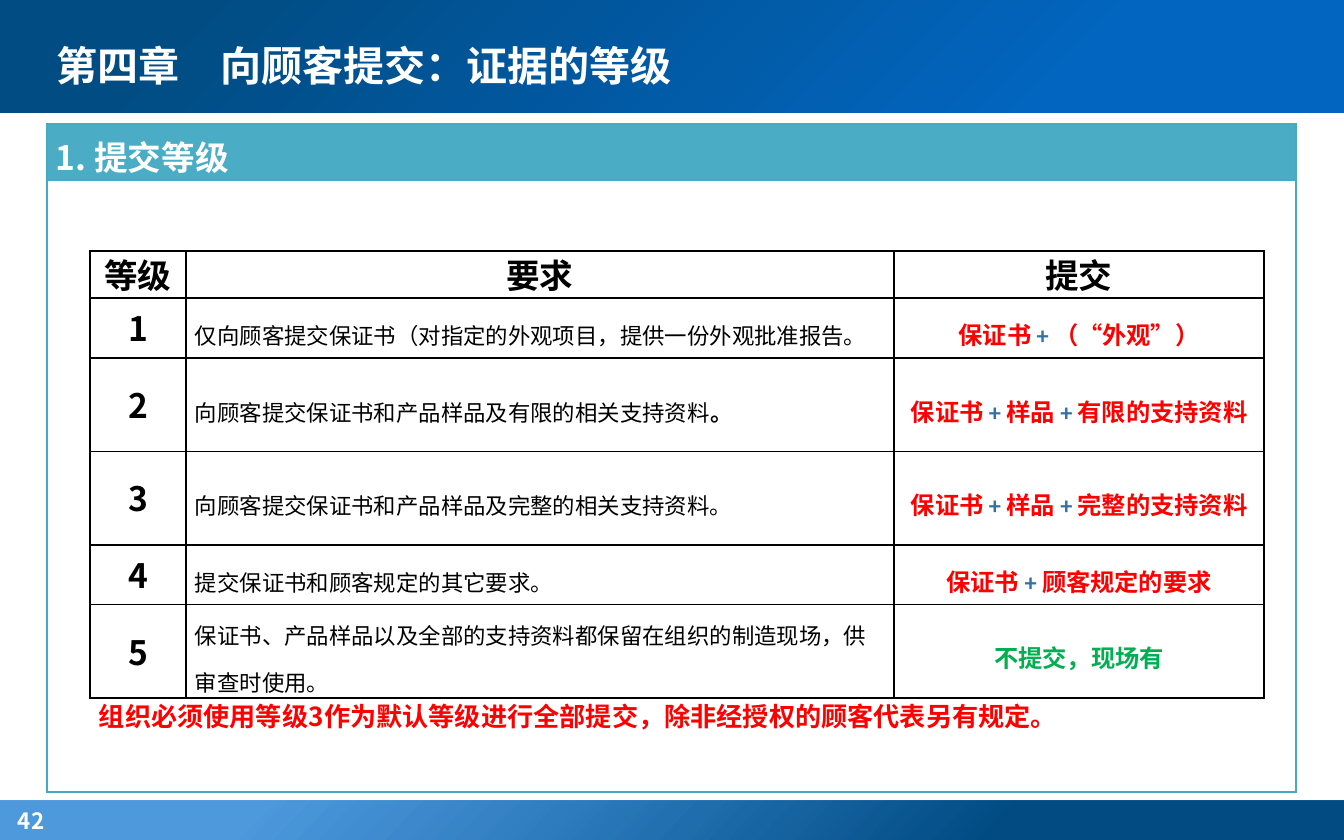
from dataclasses import dataclass
from typing import Optional

from pptx import Presentation
from pptx import util as u
from pptx.dml.color import RGBColor
from pptx.enum import shapes, text
from pptx.oxml.xmlchemy import OxmlElement

SCALE = 914400 / 134.4  # EMU per px

WHITE = RGBColor(0xFF, 0xFF, 0xFF)
BLACK = RGBColor(0, 0, 0)
RED = RGBColor(0xFF, 0, 0)
GREEN = RGBColor(0, 0xB0, 0x50)
PLUS = RGBColor(0x33, 0x71, 0xA4)
TEAL = RGBColor(0x4B, 0xAC, 0xC6)
EDGE = RGBColor(0x46, 0xAA, 0xC5)
NAVY = RGBColor(0x01, 0x4C, 0x83)
BLUE = RGBColor(0x02, 0x65, 0xBF)
SKY = RGBColor(0x02, 0x6D, 0xCE)

NOTO, CALIBRI, TIMES = "Noto Sans CJK SC", "Calibri", "Times New Roman"
LEFT, MID = text.PP_ALIGN.LEFT, text.PP_ALIGN.CENTER
INSET = 9


@dataclass
class Run:
    text: str
    color: Optional[RGBColor] = None
    bold: Optional[bool] = None


@dataclass
class Stop:
    pos: int
    color: RGBColor
    alpha: int = 100


@dataclass
class Level:
    need: list[Run]
    give: list[Run]
    height: int


def px(n: float) -> int:
    return round(n * SCALE)


def node(parent, tag: str, **attrs):
    """Append an XML child with the given attributes."""
    child = OxmlElement(tag)
    for key, val in attrs.items():
        child.set(key, str(val))
    parent.append(child)
    return child


def put(frame, runs: list[Run], *, size: int, font: str = NOTO,
        color: RGBColor = BLACK, bold: bool = True, align=LEFT,
        lead: Optional[int] = None) -> None:
    """Write one formatted paragraph into a text frame."""
    frame.word_wrap = True
    para = frame.paragraphs[0]
    para.alignment = align
    if lead:
        para.line_spacing = u.Pt(lead)
    for item in runs:
        run = para.add_run()
        run.text = item.text
        face = run.font
        face.size, face.name = u.Pt(size), font
        face.bold = bold if item.bold is None else item.bold
        face.color.rgb = item.color or color
        node(face._element, "a:ea", typeface=NOTO)


def band(slide, top: int, height: int, stops: list[Stop]) -> None:
    """Full-width bar, shaded in circles from its lower right corner."""
    bar = slide.shapes.add_shape(
        shapes.MSO_SHAPE.RECTANGLE, 0, px(top), px(1344), px(height))
    bar.shadow.inherit = False
    bar.line.fill.background()
    bar.fill.background()
    grad = OxmlElement("a:gradFill")
    marks = node(grad, "a:gsLst")
    for stop in stops:
        mark = node(marks, "a:gs", pos=stop.pos * 1000)
        tint = node(mark, "a:srgbClr", val=stop.color)
        if stop.alpha < 100:
            node(tint, "a:alpha", val=stop.alpha * 1000)
    way = node(grad, "a:path", path="circle")
    node(way, "a:fillToRect", l=100000, t=100000)
    props = bar._element.spPr
    props.replace(props.find("{*}noFill"), grad)


def grid(slide, left: int, top: int, cols: list[int], rows: list[int]):
    """Plain table with no style banding."""
    table = slide.shapes.add_table(
        len(rows), len(cols), px(left), px(top),
        px(sum(cols)), px(sum(rows))).table
    table.first_row = table.horz_banding = False
    for col, width in zip(table.columns, cols):
        col.width = px(width)
    for row, height in zip(table.rows, rows):
        row.height = px(height)
    return table


def trim(cell, edge: RGBColor, width: float, *,
         fill: Optional[RGBColor] = None, left: int = INSET, top: int = 0,
         anchor=text.MSO_ANCHOR.TOP) -> None:
    """Set a cell's fill, margins and four borders."""
    cell.margin_left, cell.margin_right = px(left), px(INSET)
    cell.margin_top, cell.margin_bottom = px(top), 0
    cell.vertical_anchor = anchor
    if fill is None:
        cell.fill.background()
    else:
        cell.fill.solid()
        cell.fill.fore_color.rgb = fill
    props = cell._tc.get_or_add_tcPr()
    for i, side in enumerate("LRTB"):
        line = OxmlElement(f"a:ln{side}")
        line.set("w", str(u.Pt(width)))
        node(node(line, "a:solidFill"), "a:srgbClr", val=edge)
        props.insert(i, line)


def total(*parts: str) -> list[Run]:
    """Join red parts with blue plus signs."""
    runs = [Run(f"{parts[0]} ")]
    for part in parts[1:]:
        runs += [Run("+ ", PLUS), Run(f"{part} ")]
    runs[-1].text = runs[-1].text.rstrip()
    return runs


LEVELS = [
    Level([Run("仅向顾客提交保证书（对指定的外观项目，提供一份外观批准报告。")],
          total("保证书", "（“外观”）"), 60),
    Level([Run("向顾客提交保证书和产品样品及有限的相关支持资料"),
           Run("。", bold=True)],
          total("保证书", "样品", "有限的支持资料"), 93),
    Level([Run("向顾客提交保证书和产品样品及完整的相关支持资料。")],
          total("保证书", "样品", "完整的支持资料"), 93),
    Level([Run("提交保证书和顾客规定的其它要求。")],
          total("保证书", "顾客规定的要求"), 60),
    Level([Run("保证书、产品样品以及全部的支持资料都保留在组织的制造现场，供审查时使用。")],
          [Run("不提交，现场有", GREEN)], 93),
]


def main() -> None:
    deck = Presentation()
    deck.slide_width, deck.slide_height = px(1344), px(840)
    slide = deck.slides.add_slide(deck.slide_layouts[5])

    # Header and footer bands, page number
    band(slide, 801, 41, [Stop(26, NAVY), Stop(80, SKY, 70)])
    band(slide, -4, 117, [Stop(21, BLUE), Stop(86, NAVY)])
    page = slide.shapes.add_textbox(0, px(802), px(79), px(38)).text_frame
    page.margin_left, page.margin_top, page.margin_bottom = px(18), 0, 0
    page.vertical_anchor = text.MSO_ANCHOR.MIDDLE
    put(page, [Run("42")], size=12, color=WHITE)

    # Title, moved above the bands
    title = slide.shapes.title
    title.left, title.top = px(43), px(18)
    title.width, title.height = px(857), px(95)
    title.text_frame.vertical_anchor = text.MSO_ANCHOR.MIDDLE
    put(title.text_frame, [Run("第四章　向顾客提交：证据的等级")],
        size=22, font=TIMES, color=WHITE)
    slide.shapes._spTree.append(title._element)

    # Section frame with heading and closing rule
    frame = grid(slide, 47, 124, [1249], [56, 612])
    head, body = frame.cell(0, 0), frame.cell(1, 0)
    trim(head, EDGE, 0.75, fill=TEAL)
    put(head.text_frame, [Run("1. 提交等级")], size=18, color=WHITE, lead=30)
    trim(body, EDGE, 0.75, left=52, top=493)
    put(body.text_frame,
        [Run("组织必须使用等级3作为默认等级进行全部提交，除非经授权的顾客代表另有规定。")],
        size=14, color=RED, lead=33)

    # Table of levels
    table = grid(slide, 90, 251, [96, 708, 370],
                 [47] + [lv.height for lv in LEVELS])
    for cell in table.iter_cells():
        trim(cell, BLACK, 1, anchor=text.MSO_ANCHOR.MIDDLE)
    for i, name in enumerate(["等级", "要求", "提交"]):
        put(table.cell(0, i).text_frame, [Run(name)],
            size=18, font=CALIBRI, align=MID, lead=25)
    for i, lv in enumerate(LEVELS, 1):
        rank, need, give = (table.cell(i, j).text_frame for j in range(3))
        put(rank, [Run(str(i))], size=18, align=MID, lead=25)
        put(need, lv.need, size=12, font=CALIBRI, bold=False, lead=25)
        put(give, lv.give, size=13, font=CALIBRI, color=RED, align=MID, lead=25)

    deck.save("out.pptx")


if __name__ == "__main__":
    main()
